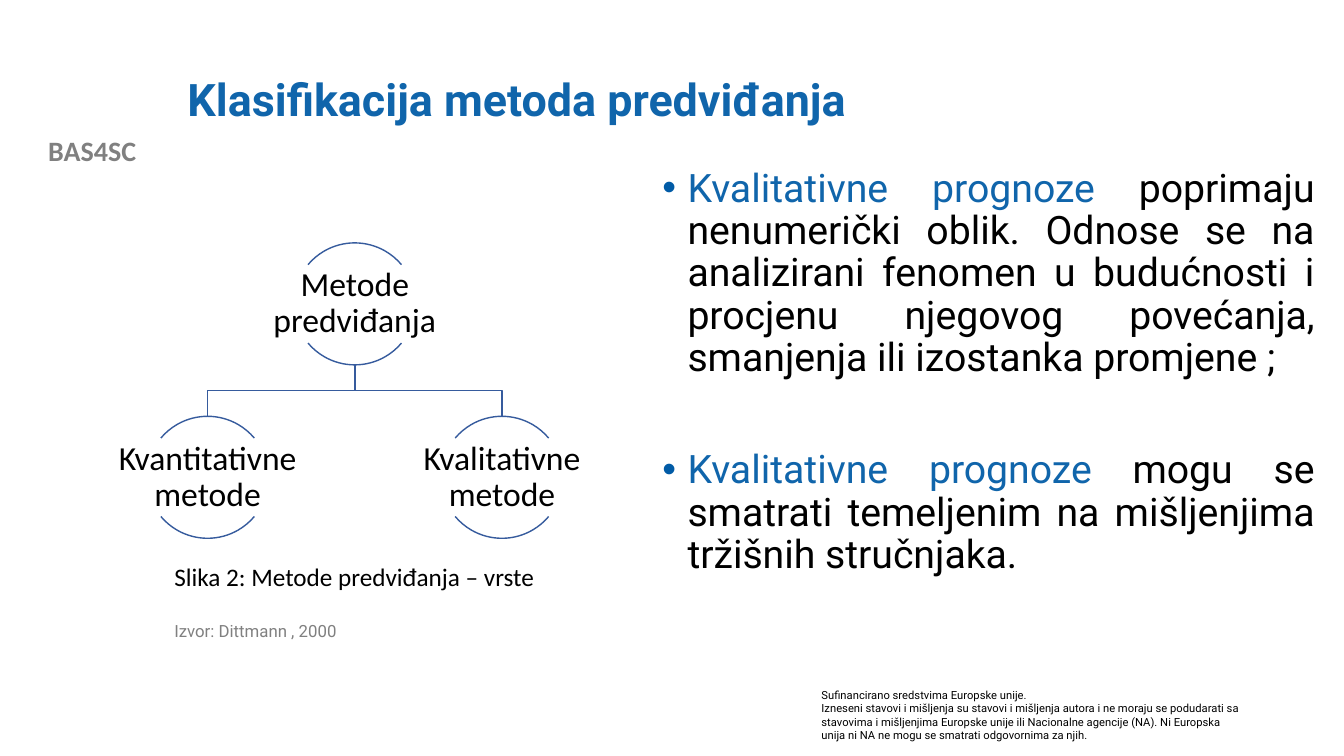
from dataclasses import dataclass

from lxml import etree
from pptx import Presentation
from pptx.dml.color import RGBColor
from pptx.enum.shapes import MSO_SHAPE
from pptx.enum.text import MSO_ANCHOR, MSO_AUTO_SIZE, PP_ALIGN
from pptx.oxml.ns import qn
from pptx.shapes.autoshape import Shape
from pptx.shapes.shapetree import GroupShapes
from pptx.util import Inches, Pt

LEFT, CENTER, JUSTIFY = PP_ALIGN.LEFT, PP_ALIGN.CENTER, PP_ALIGN.JUSTIFY
TOP, MIDDLE = MSO_ANCHOR.TOP, MSO_ANCHOR.MIDDLE
NO_FIT = MSO_AUTO_SIZE.NONE
ARC = MSO_SHAPE.ARC

BLUE = RGBColor(0x10, 0x65, 0xAB)
BULLET_BLUE = RGBColor(0x01, 0x5B, 0xA6)
LINE_BLUE = RGBColor(0x36, 0x5B, 0x9D)
GRAY = RGBColor(0x80, 0x80, 0x80)
BLACK = RGBColor(0x00, 0x00, 0x00)

SLIDE_W, SLIDE_H = Inches(13.33), Inches(7.5)
CIRCLE_W, CIRCLE_H = 9.08, 16.13
LABEL_W, LABEL_H = 18.15, 10.27
ROOT_X, ROOT_Y = 26.4, 32.13
BRANCH_STEP, BRANCH_Y = 10.95, 55.07
ARC_ANGLES = ((132, 192), (24, 84))


@dataclass(frozen=True)
class Box:
    """Percentages of the slide's width and height."""
    left: float
    top: float
    width: float
    height: float

    def emu(self) -> tuple[int, int, int, int]:
        return (across(self.left), down(self.top),
                across(self.width), down(self.height))


@dataclass(frozen=True)
class Node:
    text: str
    x: float
    top: float


@dataclass(frozen=True)
class Run:
    text: str
    color: RGBColor = BLACK


def across(percent: float) -> int:
    return round(SLIDE_W * percent / 100)


def down(percent: float) -> int:
    return round(SLIDE_H * percent / 100)


def place(sp: Shape, box: Box) -> Shape:
    sp.left, sp.top, sp.width, sp.height = box.emu()
    return sp


def add_bullet(p) -> None:
    pPr = p._p.get_or_add_pPr()
    pPr.set("marL", str(Inches(0.25)))
    pPr.set("indent", str(-Inches(0.25)))
    clr = etree.SubElement(pPr, qn("a:buClr"))
    etree.SubElement(clr, qn("a:srgbClr")).set("val", str(BULLET_BLUE))
    etree.SubElement(pPr, qn("a:buFont")).set("typeface", "Arial")
    etree.SubElement(pPr, qn("a:buChar")).set("char", "•")


def write(sp: Shape, paragraphs: list[list[Run]], *, size: float,
          font: str = "Roboto", bold: bool = False, align: PP_ALIGN = LEFT,
          anchor: MSO_ANCHOR = TOP, spacing: float = 1.0, gap: float = 0,
          inset: float | None = None, bullet: bool = False) -> None:
    tf = sp.text_frame
    tf.word_wrap = True
    tf.auto_size = NO_FIT
    tf.vertical_anchor = anchor
    if inset is not None:
        tf.margin_left = tf.margin_right = Inches(inset)
        tf.margin_top = tf.margin_bottom = Inches(inset)
    for i, runs in enumerate(paragraphs):
        p = tf.add_paragraph() if i else tf.paragraphs[0]
        if bullet:
            add_bullet(p)
        p.alignment = align
        p.line_spacing = spacing
        p.space_before = Pt(gap if i else 0)
        for run in runs:
            r = p.add_run()
            r.text = run.text
            r.font.name = font
            r.font.size = Pt(size)
            r.font.bold = bold
            r.font.color.rgb = run.color


def outline(sp: Shape) -> None:
    sp.shadow.inherit = False
    sp.fill.background()
    sp.line.color.rgb = LINE_BLUE
    sp.line.width = Pt(1)


def draw_branch(shapes: GroupShapes, parent: Node, child: Node) -> None:
    bottom = parent.top + CIRCLE_H
    middle = (bottom + child.top) / 2
    fb = shapes.build_freeform(across(parent.x), down(bottom))
    fb.add_line_segments([(across(x), down(y)) for x, y in (
        (parent.x, middle), (child.x, middle), (child.x, child.top))],
        close=False)
    outline(fb.convert_to_shape())


def draw_node(shapes: GroupShapes, node: Node) -> None:
    circle = Box(node.x - CIRCLE_W / 2, node.top, CIRCLE_W, CIRCLE_H)
    for start, end in ARC_ANGLES:
        arc = shapes.add_shape(ARC, *circle.emu())
        arc.adjustments[0], arc.adjustments[1] = start, end
        outline(arc)
    label = Box(node.x - LABEL_W / 2, node.top + (CIRCLE_H - LABEL_H) / 2,
                LABEL_W, LABEL_H)
    write(shapes.add_textbox(*label.emu()), [[Run(node.text)]], size=24,
          font="Calibri", align=CENTER, anchor=MIDDLE, spacing=0.9, inset=0.02)


def main() -> None:
    prs = Presentation()
    prs.slide_width, prs.slide_height = SLIDE_W, SLIDE_H
    s = prs.slides.add_slide(prs.slide_layouts[1])

    def textbox(box: Box) -> Shape:
        return s.shapes.add_textbox(*box.emu())

    write(textbox(Box(0, 17.07, 13.73, 5.87)), [[Run("BAS4SC", GRAY)]],
          size=20, font="Calibri", bold=True, align=CENTER)
    write(textbox(Box(60.38, 90.4, 32.78, 8.53)), [
        [Run("Sufinancirano sredstvima Europske unije.")],
        [Run("Izneseni stavovi i mišljenja su stavovi i mišljenja autora i ne "
             "moraju se podudarati sa stavovima i mišljenjima Europske unije "
             "ili Nacionalne agencije (NA). Ni Europska unija ni NA ne mogu se "
             "smatrati odgovornima za njih.")],
    ], size=8)

    write(place(s.shapes.title, Box(13.2, 5.33, 79.95, 16.27)),
          [[Run("Klasifikacija metoda predviđanja", BLUE)]],
          size=32, bold=True, anchor=MIDDLE, spacing=0.9)
    write(place(s.placeholders[1], Box(48.53, 21.6, 50.03, 63.47)), [
        [Run("Kvalitativne prognoze ", BLUE),
         Run("poprimaju nenumerički oblik. Odnose se na analizirani fenomen u "
             "budućnosti i procjenu njegovog povećanja, smanjenja ili "
             "izostanka promjene ;")],
        [Run("Kvalitativne prognoze ", BLUE),
         Run("mogu se smatrati temeljenim na mišljenjima tržišnih "
             "stručnjaka.")],
    ], size=28, align=JUSTIFY, spacing=0.9, gap=50, bullet=True)

    root = Node("Metode predviđanja", ROOT_X, ROOT_Y)
    children = [Node("Kvantitativne metode", ROOT_X - BRANCH_STEP, BRANCH_Y),
                Node("Kvalitativne metode", ROOT_X + BRANCH_STEP, BRANCH_Y)]
    diagram = s.shapes.add_group_shape().shapes
    for child in children:
        draw_branch(diagram, root, child)
    for node in [root, *children]:
        draw_node(diagram, node)

    write(textbox(Box(12.23, 81.73, 50.03, 3.73)),
          [[Run("Izvor: Dittmann , 2000", GRAY)]], size=12, spacing=0.9)
    write(textbox(Box(12.23, 73.6, 33.6, 5.33)),
          [[Run("Slika 2: Metode predviđanja – vrste")]],
          size=18, font="Calibri")

    prs.save("out.pptx")


if __name__ == "__main__":
    main()
